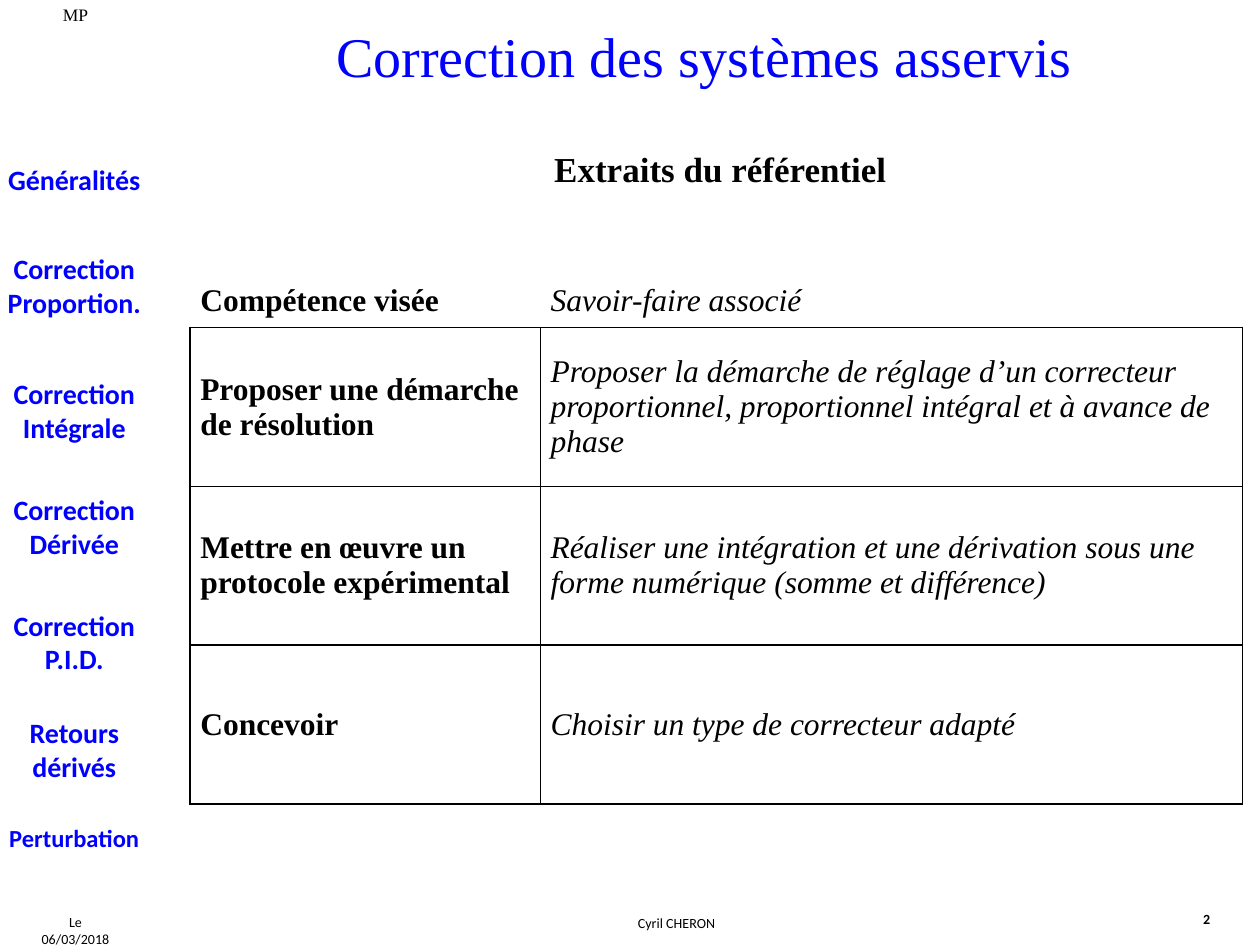
from lxml import etree
from pptx import Presentation
from pptx.dml.color import RGBColor
from pptx.enum.text import MSO_ANCHOR, MSO_AUTO_SIZE, PP_ALIGN
from pptx.oxml.ns import qn
from pptx.util import Inches, Pt

LEFT, CENTER = PP_ALIGN.LEFT, PP_ALIGN.CENTER
TOP, MIDDLE = MSO_ANCHOR.TOP, MSO_ANCHOR.MIDDLE
NO_AUTOSIZE = MSO_AUTO_SIZE.NONE

BLACK = RGBColor(0x00, 0x00, 0x00)
BLUE = RGBColor(0x00, 0x00, 0xFF)
WHITE = RGBColor(0xFF, 0xFF, 0xFF)
SANS, SERIF = "Calibri", "Times New Roman"

TITLE = "Correction des systèmes asservis"

# text, top, height, size
MENU = [
    ("Généralités", 1.24, 0.37, 16),
    ("Correction Proportion.", 1.95, 0.64, 16),
    ("Correction Intégrale", 2.94, 0.91, 16),
    ("Correction Dérivée", 3.86, 0.64, 16),
    ("Correction P.I.D.", 4.78, 0.64, 16),
    ("Retours dérivés", 5.63, 0.64, 16),
    ("Perturbation", 6.48, 0.34, 14),
]
MENU_LEFT, MENU_WIDTH = 0.01, 1.16

# text, (left, top, width, height), font, size, bold, alignment, wrap
LABELS = [
    ("MP", (0.17, -0.02, 0.86, 0.27), SERIF, 10, False, CENTER, True),
    ("Extraits du référentiel", (4.3, 1.12, 2.86, 0.44), SERIF, 20, True, LEFT, False),
    ("Le 06/03/2018", (0.17, 7.2, 0.86, 0.24), SANS, 8, False, CENTER, False),
    ("Cyril CHERON", (1.25, 7.21, 8.24, 0.24), SANS, 8, False, CENTER, True),
    ("2", (9.45, 7.18, 0.39, 0.24), SANS, 8, True, LEFT, False),
]

SKILLS = [
    ("Compétence visée", "Savoir-faire associé"),
    ("Proposer une démarche de résolution",
     "Proposer la démarche de réglage d’un correcteur proportionnel, "
     "proportionnel intégral et à avance de phase"),
    ("Mettre en œuvre un protocole expérimental",
     "Réaliser une intégration et une dérivation sous une forme numérique "
     "(somme et différence)"),
    ("Concevoir", "Choisir un type de correcteur adapté"),
]
TABLE_LEFT, TABLE_TOP = 1.51, 2.18
COLUMN_WIDTHS = [2.78, 5.57]
HEADER_HEIGHT, ROW_HEIGHT = 0.42, 1.26


def write(frame, text, font, size, color, bold=False, italic=False, align=LEFT):
    frame.text = text
    paragraph = frame.paragraphs[0]
    paragraph.alignment = align
    paragraph.font.name = font
    paragraph.font.size = Pt(size)
    paragraph.font.bold = bold
    paragraph.font.italic = italic
    paragraph.font.color.rgb = color


def add_label(slide, text, box, font, size, bold, align, wrap, color=BLACK, inset=0.1):
    frame = slide.shapes.add_textbox(*map(Inches, box)).text_frame
    frame.word_wrap = wrap
    frame.margin_left = frame.margin_right = Inches(inset)
    write(frame, text, font, size, color, bold, align=align)


def add_title(slide):
    title = slide.shapes.title
    title.left, title.top = Inches(2.54), Inches(0.12)
    title.width, title.height = Inches(6.1), Inches(0.64)
    frame = title.text_frame
    frame.word_wrap = False
    frame.auto_size = NO_AUTOSIZE
    frame.vertical_anchor = TOP
    write(frame, TITLE, SERIF, 32, BLUE, align=CENTER)


def set_borders(cell, colors):
    """Draw 1 pt cell borders; colors are left, right, top, bottom."""
    properties = cell._tc.get_or_add_tcPr()
    for tag, color in zip(("a:lnL", "a:lnR", "a:lnT", "a:lnB"), colors):
        line = etree.SubElement(properties, qn(tag), w=str(Pt(1)))
        fill = etree.SubElement(line, qn("a:solidFill"))
        etree.SubElement(fill, qn("a:srgbClr"), val=str(color))


def add_skills_table(slide):
    heights = [HEADER_HEIGHT] + [ROW_HEIGHT] * (len(SKILLS) - 1)
    table = slide.shapes.add_table(
        len(SKILLS), len(COLUMN_WIDTHS), Inches(TABLE_LEFT), Inches(TABLE_TOP),
        Inches(sum(COLUMN_WIDTHS)), Inches(sum(heights))).table
    table.first_row = table.horz_banding = False
    for column, width in zip(table.columns, COLUMN_WIDTHS):
        column.width = Inches(width)
    for row, height in zip(table.rows, heights):
        row.height = Inches(height)

    for r, texts in enumerate(SKILLS):
        edge = WHITE if r == 0 else BLACK
        for c, text in enumerate(texts):
            cell = table.cell(r, c)
            cell.vertical_anchor = MIDDLE
            cell.margin_left = cell.margin_right = Inches(0.08)
            cell.margin_top = cell.margin_bottom = 0
            set_borders(cell, (edge, edge, edge, BLACK))
            cell.fill.background()
            write(cell.text_frame, text, SERIF, 18, BLACK, bold=c == 0, italic=c == 1)


def main():
    presentation = Presentation()
    presentation.slide_width, presentation.slide_height = Inches(10), Inches(7.5)
    slide = presentation.slides.add_slide(presentation.slide_layouts.get_by_name("Title Only"))
    add_title(slide)
    for text, top, height, size in MENU:
        add_label(slide, text, (MENU_LEFT, top, MENU_WIDTH, height),
                  SANS, size, True, CENTER, True, BLUE, 0.04)
    for label in LABELS:
        add_label(slide, *label)
    add_skills_table(slide)
    presentation.save("out.pptx")


if __name__ == "__main__":
    main()
